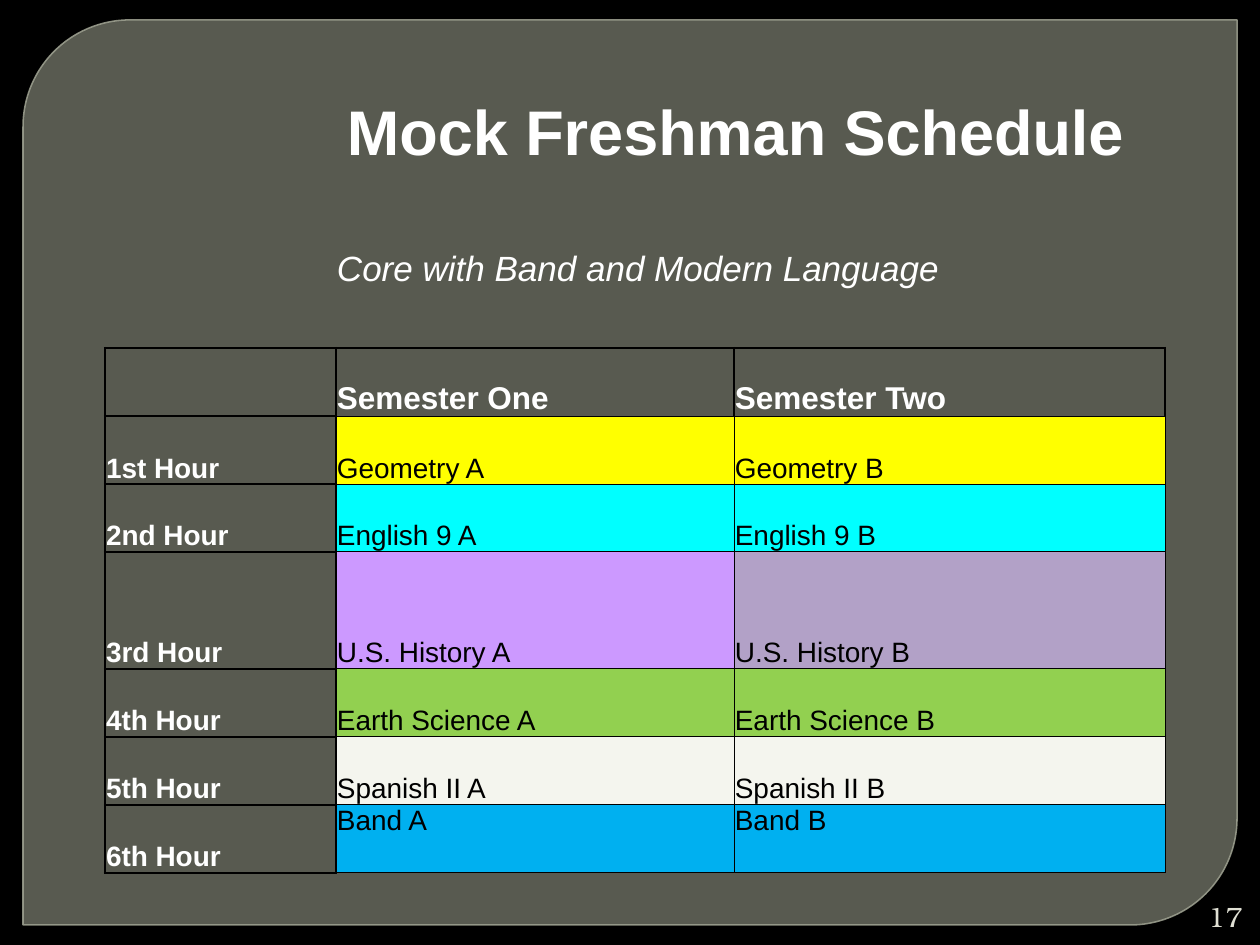
from pptx import Presentation
from pptx.dml.color import RGBColor
from pptx.enum.shapes import MSO_SHAPE as Shape
from pptx.enum.text import MSO_ANCHOR as Anchor, PP_ALIGN as Align
from pptx.oxml.ns import qn
from pptx.util import Pt
from lxml.etree import SubElement

SCALE = 914400 / 126
COLORS = {
    "background": "000000", "panel": "888B7B", "panel_line": "9DA090",
    "number": "E0E0D4", "light": "FFFFFF", "dark": "000000",
    "yellow": "FFFF00", "cyan": "00FFFF", "violet": "CC99FF",
    "mauve": "B2A1C7", "green": "92D050", "cream": "F4F5EE", "blue": "00B0F0",
}
STYLES = {
    "title": {"size": Pt(36), "bold": True, "italic": False},
    "subtitle": {"size": Pt(20), "bold": False, "italic": True},
    "header": {"size": Pt(18), "bold": True, "italic": False},
    "hour": {"size": Pt(16), "bold": True, "italic": False},
    "course": {"size": Pt(16), "bold": False, "italic": False},
    "number": {"size": Pt(16), "bold": False, "italic": False},
}
COURSES = [
    ("1st Hour", "Geometry", "yellow", "yellow"),
    ("2nd Hour", "English 9", "cyan", "cyan"),
    ("3rd Hour", "U.S. History", "violet", "mauve"),
    ("4th Hour", "Earth Science", "green", "green"),
    ("5th Hour", "Spanish II", "cream", "cream"),
    ("6th Hour", "Band", "blue", "blue"),
]
COLUMN_WIDTHS = [231, 10, 388, 431]
ROW_HEIGHTS = [208, 108, 68, 68, 68, 117, 68, 68, 68]
THICK, THIN = 1.5, 0.5


def px(value):
    return round(value * SCALE)


def place(box):
    return [px(value) for value in box]


def rgb(name):
    return RGBColor.from_string(COLORS[name])


def write(text_frame, text, style, color, font_name="Arial", align=Align.LEFT):
    paragraph = text_frame.paragraphs[0]
    paragraph.alignment = align
    run = paragraph.add_run()
    run.text = text
    run.font.name = font_name
    run.font.color.rgb = rgb(color)
    for name, value in STYLES[style].items():
        setattr(run.font, name, value)


def set_alpha(fill_parent, percent):
    color = next(fill_parent.iter(qn("a:srgbClr")))
    SubElement(color, qn("a:alpha"), val=str(percent * 1000))


def add_panel(slide, box):
    panel = slide.shapes.add_shape(Shape.ROUND_2_DIAG_RECTANGLE, *place(box))
    panel.shadow.inherit = False
    panel.adjustments[0], panel.adjustments[1] = 0.118, 0
    panel.fill.solid()
    panel.fill.fore_color.rgb = rgb("panel")
    panel.line.color.rgb = rgb("panel_line")
    panel.line.width = Pt(0.87)
    properties = panel.element.spPr
    set_alpha(properties.find(qn("a:solidFill")), 65)
    set_alpha(properties.find(qn("a:ln")), 88)


def add_slide_number(slide, box, number):
    text_frame = slide.shapes.add_textbox(*place(box)).text_frame
    text_frame.word_wrap = True
    text_frame.vertical_anchor = Anchor.MIDDLE
    write(text_frame, number, "number", "number", "TeX Gyre Bonum", Align.RIGHT)


def border_widths(row, column):
    """Widths of the left, right, top and bottom edges; 0 is no line."""
    if row == 0:
        return 0, 0, 0, 0
    if row == 1:
        return 0, 0, 0, THICK
    if column == 0:
        return THICK, THICK, THICK, THICK
    if row == 2:
        return THICK, THICK, THICK, THIN
    return THIN, THIN, THIN, THIN


def set_borders(cell, widths):
    properties = cell._tc.get_or_add_tcPr()
    for edge, width in zip("LRTB", widths):
        line = SubElement(properties, qn(f"a:ln{edge}"), w=str(Pt(width)))
        if width:
            fill = SubElement(line, qn("a:solidFill"))
            SubElement(fill, qn("a:srgbClr"), val=COLORS["dark"])
        else:
            SubElement(line, qn("a:noFill"))


def format_cell(cell, row, column):
    set_borders(cell, border_widths(row, column))
    cell.fill.background()
    cell.vertical_anchor = Anchor.BOTTOM
    cell.margin_left = cell.margin_right = cell.margin_top = px(1)
    cell.margin_bottom = 0


def add_schedule(slide, left, top):
    box = (left, top, sum(COLUMN_WIDTHS), sum(ROW_HEIGHTS))
    table = slide.shapes.add_table(
        len(ROW_HEIGHTS), len(COLUMN_WIDTHS), *place(box)).table
    table.first_row = table.horz_banding = False
    for column, width in zip(table.columns, COLUMN_WIDTHS):
        column.width = px(width)
    for row, height in zip(table.rows, ROW_HEIGHTS):
        row.height = px(height)
    for row in range(len(ROW_HEIGHTS)):
        for column in range(len(COLUMN_WIDTHS)):
            format_cell(table.cell(row, column), row, column)

    table.cell(0, 2).merge(table.cell(0, 3))
    table.cell(1, 1).merge(table.cell(1, 3))
    for row in range(2, len(ROW_HEIGHTS)):
        table.cell(row, 1).merge(table.cell(row, 2))

    headings = [
        (0, 2, "Mock Freshman Schedule", "title", 71),
        (1, 1, "Core with Band and Modern Language", "subtitle", 59),
        (2, 1, "Semester One", "header", 0),
        (2, 3, "Semester Two", "header", 0),
    ]
    for row, column, text, style, gap_below in headings:
        cell = table.cell(row, column)
        cell.margin_bottom = px(gap_below)
        write(cell.text_frame, text, style, "light")

    for row, (hour, course, *fills) in enumerate(COURSES, start=3):
        write(table.cell(row, 0).text_frame, hour, "hour", "light")
        for column, semester, fill in zip((1, 3), "AB", fills):
            cell = table.cell(row, column)
            cell.fill.solid()
            cell.fill.fore_color.rgb = rgb(fill)
            if course == "Band":
                cell.vertical_anchor = Anchor.TOP
            write(cell.text_frame, f"{course} {semester}", "course", "dark")


def main():
    presentation = Presentation()
    presentation.slide_width, presentation.slide_height = px(1260), px(945)
    slide = presentation.slides.add_slide(presentation.slide_layouts[6])
    slide.background.fill.solid()
    slide.background.fill.fore_color.rgb = rgb("background")
    add_panel(slide, (23, 20, 1214, 905))
    add_slide_number(slide, (1191, 897, 64, 38), "17")
    add_schedule(slide, 105, 32)
    presentation.save("out.pptx")


if __name__ == "__main__":
    main()
